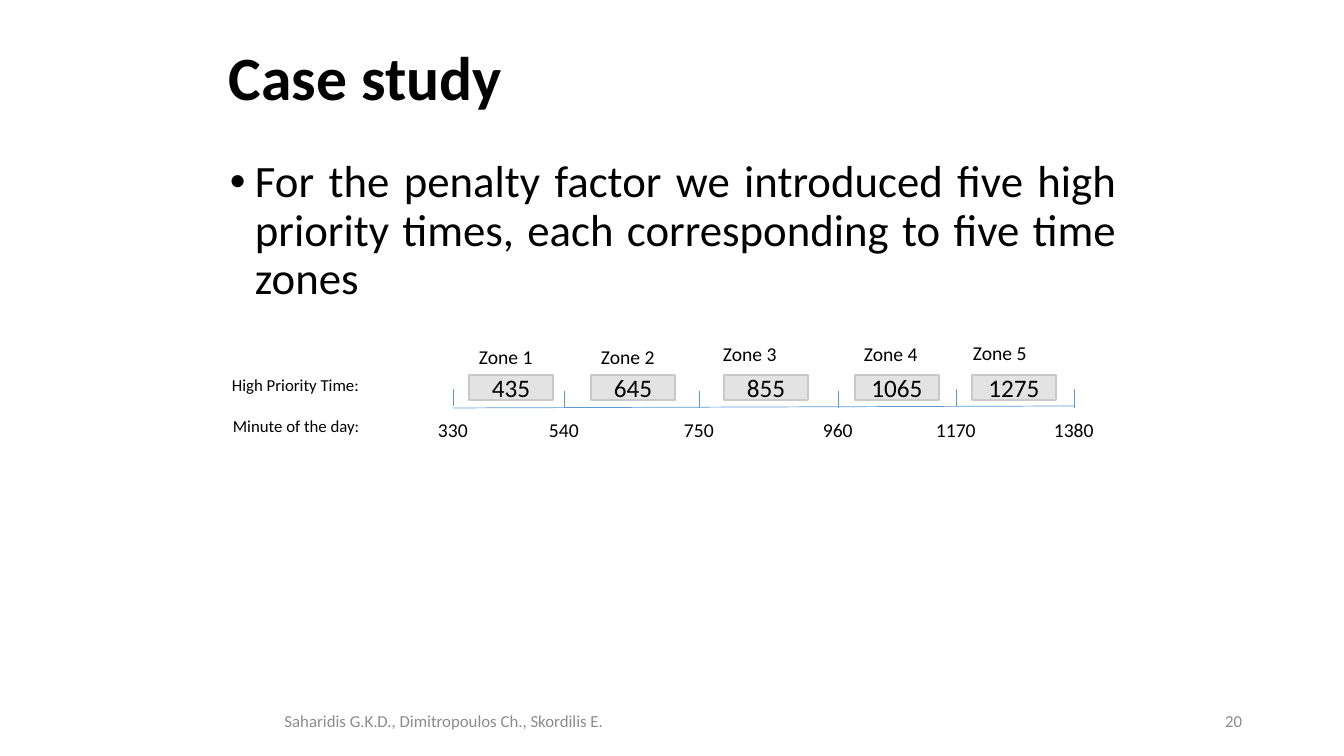
from lxml.etree import SubElement
from pptx import Presentation
from pptx.dml.color import RGBColor
from pptx.enum.shapes import MSO_CONNECTOR as Connector, MSO_SHAPE as Preset
from pptx.enum.text import MSO_ANCHOR as Anchor, MSO_AUTO_SIZE as AutoSize, PP_ALIGN as Align
from pptx.oxml.ns import qn
from pptx.util import Pt

EMU_PER_PX = 914400 / 100.8
FONT = "Calibri"
COLORS = {"text": "000000", "footer": "8C8C8C", "axis": "5B9BD5", "zone": "C9C9C9"}

# Minute, tick x, tick top, tick bottom
TICKS = [
    (330, 453, 389, 406), (540, 564, 391, 408), (750, 699, 391, 408),
    (960, 838, 391, 408), (1170, 956, 389, 406), (1380, 1074, 389, 408),
]
# Box left, label left, label top
ZONES = [(469, 469, 340), (591, 591, 340), (724, 713, 337), (855, 854, 337), (972, 963, 336)]


def px(length):
    return round(length * EMU_PER_PX)


def color(name):
    return RGBColor.from_string(COLORS[name])


def write(shape, text, size, tone="text", bold=False, frame_format=None, **para_format):
    frame = shape.text_frame
    for name, value in {"word_wrap": True, **(frame_format or {})}.items():
        setattr(frame, name, value)
    para = frame.paragraphs[0]
    for name, value in para_format.items():
        setattr(para, name, value)
    span = para.add_run()
    span.text = text
    for name, value in {"name": FONT, "size": Pt(size), "bold": bold}.items():
        setattr(span.font, name, value)
    span.font.color.rgb = color(tone)
    return para


def add_text(page, place, text, size, **style):
    box = page.shapes.add_textbox(*map(px, place))
    return write(box, text, size, **style)


def add_label(page, place, text, size, **style):
    fit = {"word_wrap": False, "auto_size": AutoSize.SHAPE_TO_FIT_TEXT}
    add_text(page, place, text, size, frame_format=fit, **style)


def add_bullet(para, indent):
    properties = para._p.get_or_add_pPr()
    properties.set("marL", str(px(indent)))
    properties.set("indent", str(-px(indent)))
    SubElement(properties, qn("a:buFont"), typeface="Arial")
    SubElement(properties, qn("a:buChar"), char="•")


def add_line(page, *ends):
    line = page.shapes.add_connector(Connector.STRAIGHT, *map(px, ends))
    line.line.color.rgb = color("axis")
    line.line.width = Pt(0.5)
    SubElement(line._element.spPr, qn("a:effectLst"))


def add_zone_box(page, left, text):
    box = page.shapes.add_shape(Preset.RECTANGLE, *map(px, (left, 375, 84, 25)))
    box.shadow.inherit = False
    box.fill.solid()
    box.fill.fore_color.rgb = color("zone")
    fill_color = box._element.spPr.find(qn("a:solidFill"))[0]
    SubElement(fill_color, qn("a:alpha"), val="50000")
    box.line.color.rgb = color("zone")
    box.line.width = Pt(1)
    write(box, text, 18, frame_format={"vertical_anchor": Anchor.MIDDLE}, alignment=Align.CENTER)


def add_timeline(page):
    # Axis with its ticks and minutes
    add_line(page, 453, 408, 1074, 406)
    for minute, x, top, bottom in TICKS:
        add_line(page, x, bottom, x, top)
        width = 50 if minute < 1000 else 60
        add_label(page, (x - width // 2, 413, width, 34), str(minute), 14)

    # Each high priority time is the middle of its zone
    for number, (box_left, label_left, label_top) in enumerate(ZONES, 1):
        middle = (TICKS[number - 1][0] + TICKS[number][0]) // 2
        add_zone_box(page, box_left, str(middle))
        add_label(page, (label_left, label_top, 75, 34), f"Zone {number}", 14)

    # Row names
    add_label(page, (222, 370, 149, 30), "High Priority Time:", 12)
    add_label(page, (223, 411, 148, 30), "Minute of the day:", 12)


def main():
    deck = Presentation()
    deck.slide_width, deck.slide_height = px(1344), px(756)
    page = deck.slides.add_slide(deck.slide_layouts[6])

    # Title and statement
    add_text(page, (219, 0, 907, 118), "Case study", 44, bold=True,
             frame_format={"vertical_anchor": Anchor.BOTTOM}, line_spacing=Pt(58))
    statement = add_text(
        page, (220, 154, 907, 143),
        "For the penalty factor we introduced five high priority times, "
        "each corresponding to five time zones",
        32, alignment=Align.JUSTIFY, line_spacing=0.9, space_before=Pt(10))
    add_bullet(statement, 25)

    add_timeline(page)

    # Footer
    footer = {"tone": "footer", "frame_format": {"vertical_anchor": Anchor.MIDDLE}}
    add_text(page, (241, 701, 406, 40), "Saharidis G.K.D., Dimitropoulos Ch., Skordilis E.", 12,
             alignment=Align.CENTER, **footer)
    add_text(page, (950, 701, 302, 40), "20", 12, alignment=Align.RIGHT, **footer)

    deck.save("out.pptx")


if __name__ == "__main__":
    main()
